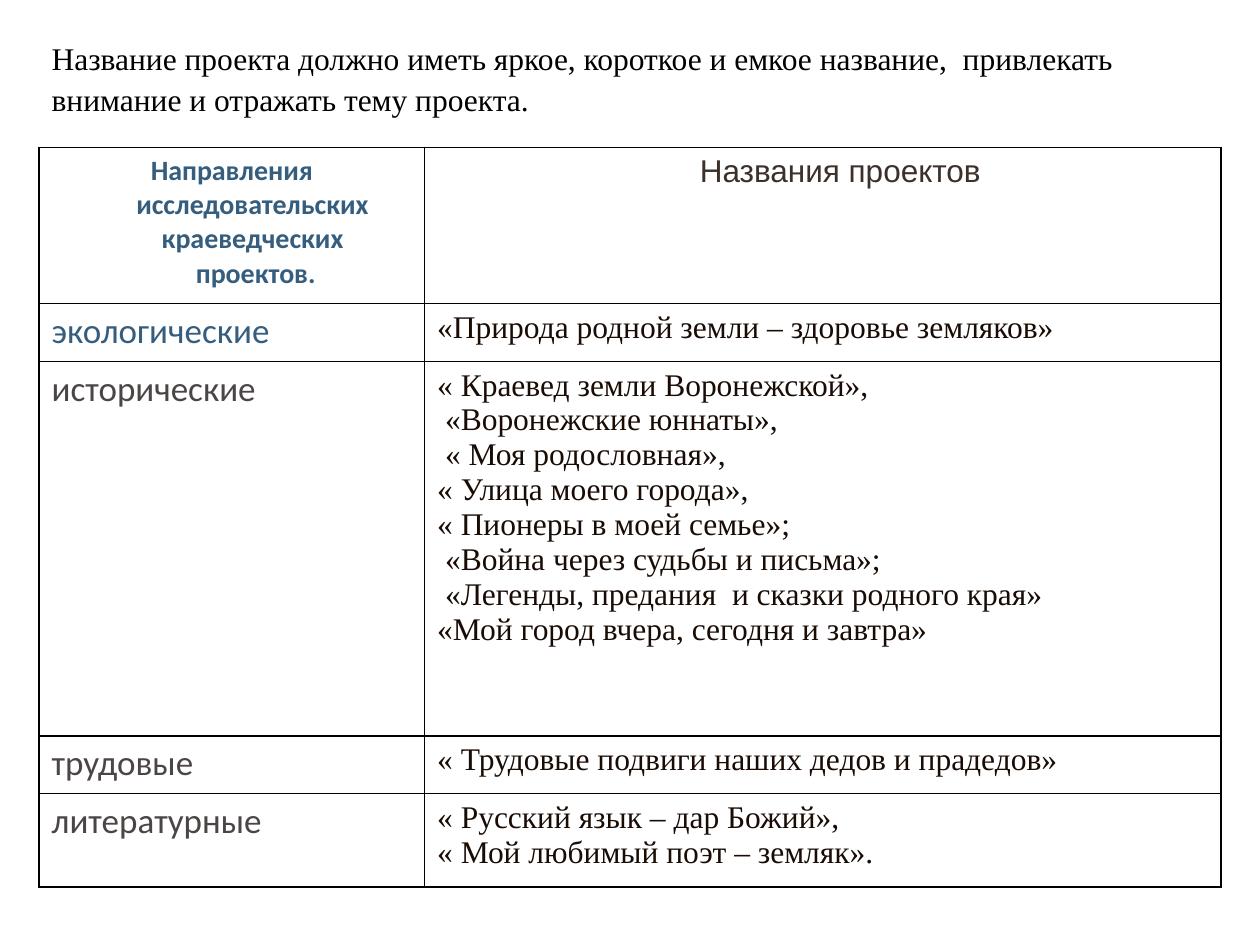
from lxml.etree import SubElement
from pptx import Presentation
from pptx.dml.color import RGBColor
from pptx.enum.text import MSO_ANCHOR, MSO_AUTO_SIZE, PP_ALIGN
from pptx.oxml.ns import qn
from pptx.util import Inches, Pt

BLACK = RGBColor(0x00, 0x00, 0x00)
BLUE = RGBColor(0x35, 0x5D, 0x7E)
GRAY = RGBColor(0x4C, 0x45, 0x45)
BROWN = RGBColor(0x3C, 0x30, 0x2A)
DARK = RGBColor(0x19, 0x0C, 0x05)

LEFT, WIDTH = Inches(0.31), Inches(9.38)
HANGING = (Inches(0.38), Inches(-0.38))
SHIFTED = (Inches(0.28), 0)
FLUSH = (0, 0)

COLUMN_WIDTHS = (3.06, 6.32)
ROW_HEIGHTS = (1.24, 0.46, 2.97, 0.46, 0.74)

PROJECTS = (
    ("экологические", BLUE, HANGING, ["«Природа родной земли – здоровье земляков»"]),
    ("исторические", GRAY, FLUSH, [
        "« Краевед земли Воронежской»,",
        " «Воронежские юннаты»,",
        " « Моя родословная»,",
        "« Улица моего города»,",
        "« Пионеры в моей семье»;",
        " «Война через судьбы и письма»;",
        " «Легенды, предания  и сказки родного края»",
        "«Мой город вчера, сегодня и завтра»",
    ]),
    ("трудовые", GRAY, HANGING, ["« Трудовые подвиги наших дедов и прадедов»"]),
    ("литературные", GRAY, HANGING, [
        "« Русский язык – дар Божий»,",
        "« Мой любимый поэт – земляк».",
    ]),
)


class SlideBuilder:
    serif, sans, heading_font = "Times New Roman", "Calibri", "Arial"
    text_size = 18

    def __init__(self, presentation):
        self.slide = presentation.slides.add_slide(presentation.slide_layouts[5])

    def style(self, paragraph, name, size, color, bold=False, align=PP_ALIGN.LEFT):
        paragraph.alignment = align
        font = paragraph.font
        font.name, font.size, font.bold = name, Pt(size), bold
        font.color.rgb = color

    def title(self, text, top, height):
        shape = self.slide.shapes.title
        shape.left, shape.top, shape.width, shape.height = LEFT, top, WIDTH, height
        frame = shape.text_frame
        frame.text = text
        frame.word_wrap = True
        frame.auto_size = MSO_AUTO_SIZE.SHAPE_TO_FIT_TEXT
        frame.vertical_anchor = MSO_ANCHOR.TOP
        paragraph = frame.paragraphs[0]
        paragraph.line_spacing = 1.09
        self.style(paragraph, self.serif, self.text_size, BLACK)

    def table(self, top):
        frame = self.slide.shapes.add_table(
            len(ROW_HEIGHTS), len(COLUMN_WIDTHS), LEFT, top, WIDTH, Inches(sum(ROW_HEIGHTS)))
        table = frame.table
        table.first_row = table.horz_banding = False
        for column, width in zip(table.columns, COLUMN_WIDTHS):
            column.width = Inches(width)
        for row, height in zip(table.rows, ROW_HEIGHTS):
            row.height = Inches(height)
        for cell in table.iter_cells():
            self.borders(cell)
            cell.fill.background()
        return table

    def borders(self, cell):
        properties = cell._tc.get_or_add_tcPr()
        for side in ("a:lnL", "a:lnR", "a:lnT", "a:lnB"):
            line = SubElement(properties, qn(side), w=str(Pt(1)))
            fill = SubElement(line, qn("a:solidFill"))
            SubElement(fill, qn("a:srgbClr"), val=str(BLACK))

    def cell_text(self, cell, lines, indents, *font, **options):
        cell.text_frame.text = "\n".join(lines)
        margin, indent = indents
        for paragraph in cell.text_frame.paragraphs:
            properties = paragraph._p.get_or_add_pPr()
            properties.set("marL", str(margin))
            properties.set("indent", str(indent))
            self.style(paragraph, *font, **options)


def main():
    presentation = Presentation()
    presentation.slide_width, presentation.slide_height = Inches(10), Inches(7.5)
    builder = SlideBuilder(presentation)

    table = builder.table(Inches(1.17))
    builder.cell_text(
        table.cell(0, 0), ["Направления исследовательских  краеведческих  проектов."],
        HANGING, builder.sans, 16, BLUE, bold=True, align=PP_ALIGN.CENTER)
    builder.cell_text(
        table.cell(0, 1), ["Названия проектов"],
        SHIFTED, builder.heading_font, builder.text_size, BROWN, align=PP_ALIGN.CENTER)
    for row, (direction, color, indents, names) in enumerate(PROJECTS, start=1):
        builder.cell_text(table.cell(row, 0), [direction], HANGING, builder.sans, 20, color)
        builder.cell_text(
            table.cell(row, 1), names, indents, builder.serif, builder.text_size, DARK)

    builder.title(
        "Название проекта должно иметь яркое, короткое и емкое название,  "
        "привлекать внимание и отражать тему проекта.",
        Inches(0.23), Inches(0.71))
    presentation.save("out.pptx")


if __name__ == "__main__":
    main()
